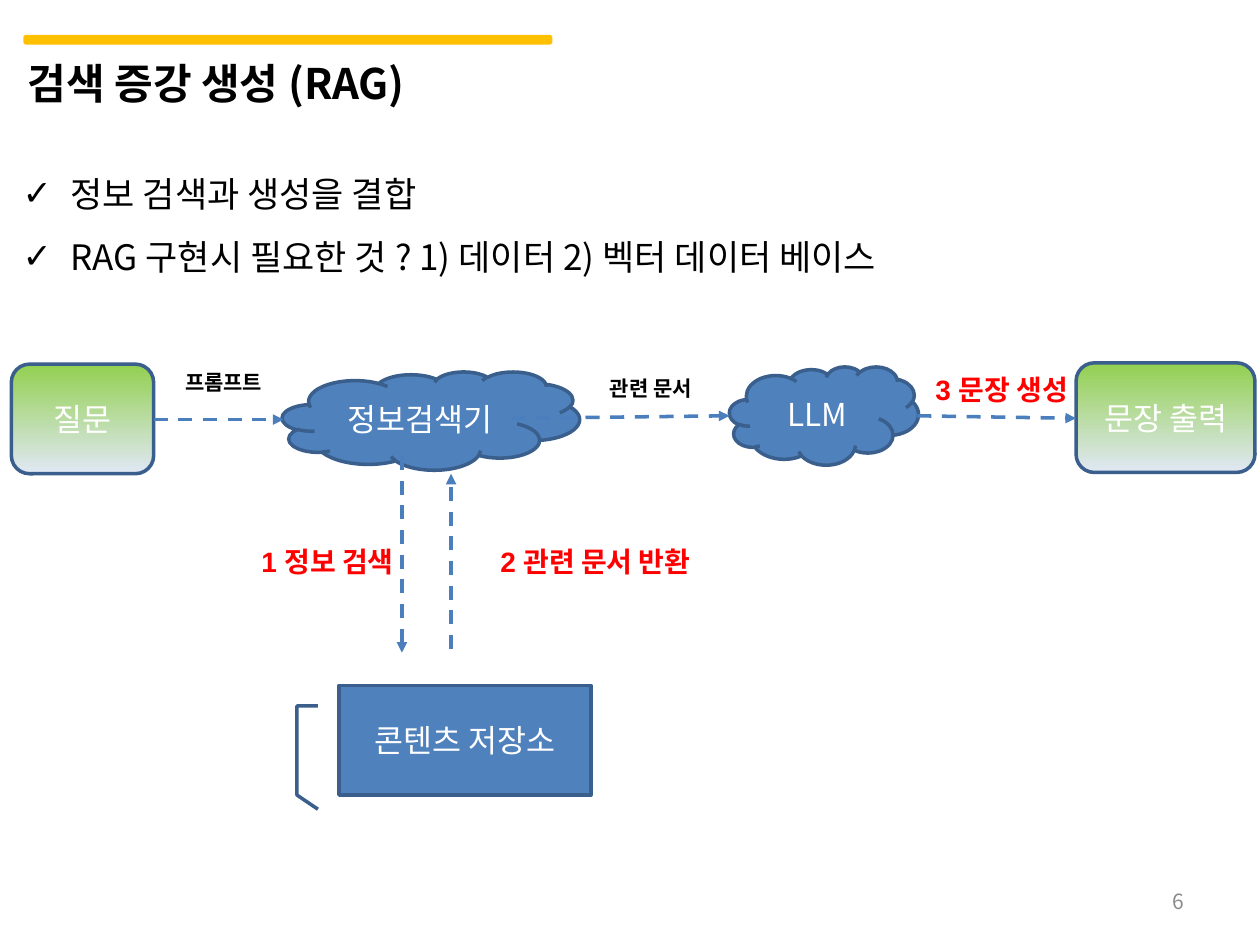
import pptx
import pptx.util
import pptx.dml.color
import pptx.enum.dml
import pptx.enum.shapes
import pptx.enum.text
import pptx.oxml.ns
from lxml import etree

SHAPE = pptx.enum.shapes.MSO_SHAPE
ALIGN = pptx.enum.text.PP_ALIGN
ANCHOR = pptx.enum.text.MSO_ANCHOR
HANGUL_FONT, LABEL_FONT = "Noto Sans CJK KR", "Arial"
BLUE, EDGE, ARROW = "4F81BD", "3A5F8C", "4B7EBC"
GOLD, RED, BLACK, WHITE, GREY = "FFC000", "FF0000", "000000", "FFFFFF", "8C8C8C"
GRADIENT = ("92D050", "E1E8F5")

TITLE = "검색 증강 생성 (RAG)"
BULLETS = [
    "정보 검색과 생성을 결합",
    "RAG 구현시 필요한 것 ? 1) 데이터 2) 벡터 데이터 베이스",
]
# text, preset, (left, top, width, height), fill
NODES = [
    ("질문", SHAPE.ROUNDED_RECTANGLE, (0.09, 2.89, 1.13, 0.87), GRADIENT),
    ("LLM", SHAPE.CLOUD, (5.79, 2.91, 1.5, 0.78), BLUE),
    ("정보검색기", SHAPE.CLOUD, (2.24, 2.95, 2.36, 0.78), BLUE),
    ("콘텐츠 저장소", SHAPE.LINE_CALLOUT_3, (2.69, 5.44, 2, 0.87), BLUE),
    ("문장 출력", SHAPE.ROUNDED_RECTANGLE, (8.54, 2.88, 1.42, 0.87), GRADIENT),
]
# start, end; the arrowhead is at the end
ARROWS = [
    ((1.22, 3.33), (2.25, 3.33)),
    ((4.06, 3.32), (5.79, 3.3)),
    ((7.28, 3.3), (8.54, 3.32)),
    ((3.19, 3.62), (3.19, 5.18)),
    ((3.58, 5.15), (3.58, 3.76)),
]
# text, box, size, colour
LABELS = [
    ("프롬프트", (1.22, 2.88, 1.11, 0.3), 12, BLACK),
    ("관련 문서", (4.61, 2.93, 1.11, 0.3), 12, BLACK),
    ("1 정보 검색", (1.93, 4.27, 1.34, 0.37), 16, RED),
    ("2 관련 문서 반환", (3.73, 4.27, 1.99, 0.37), 16, RED),
    ("3 문장 생성", (7.28, 2.91, 1.34, 0.37), 16, RED),
]


def inches(values):
    return [pptx.util.Inches(value) for value in values]


def paint(color_format, color):
    color_format.rgb = pptx.dml.color.RGBColor.from_string(color)


def add_element(parent, tag, **attributes):
    return etree.SubElement(parent, pptx.oxml.ns.qn(tag), **attributes)


def place(shape, box):
    shape.left, shape.top, shape.width, shape.height = inches(box)


def format_text(shape, size, color, align, anchor, font=HANGUL_FONT, bold=False):
    shape.text_frame.vertical_anchor = anchor
    for paragraph in shape.text_frame.paragraphs:
        paragraph.alignment = align
        for run in paragraph.runs:
            run.font.size = pptx.util.Pt(size)
            run.font.bold = bold
            run.font.name = font
            paint(run.font.color, color)
            add_element(run.font._element, "a:ea", typeface=HANGUL_FONT)


def add_filled_shape(slide, preset, box, fill, edge):
    shape = slide.shapes.add_shape(preset, *inches(box))
    shape.shadow.inherit = False
    if isinstance(fill, tuple):
        shape.fill.gradient()
        shape.fill.gradient_angle = 270
        for stop, color in zip(shape.fill.gradient_stops, fill):
            paint(stop.color, color)
    else:
        shape.fill.solid()
        paint(shape.fill.fore_color, fill)
    paint(shape.line.color, edge)
    shape.line.width = pptx.util.Pt(2)
    return shape


def add_arrow(slide, start, end):
    connector = slide.shapes.add_connector(
        pptx.enum.shapes.MSO_CONNECTOR.STRAIGHT, *inches(start + end))
    paint(connector.line.color, ARROW)
    connector.line.width = pptx.util.Pt(2)
    connector.line.dash_style = pptx.enum.dml.MSO_LINE.DASH
    add_element(connector.line._get_or_add_ln(), "a:tailEnd", type="triangle")
    add_element(connector._element.spPr, "a:effectLst")


def add_text(slide, text, box):
    shape = slide.shapes.add_textbox(*inches(box))
    shape.text_frame.text = text
    return shape


def fill_bullets(body):
    place(body, (0.08, 1.23, 9.62, 0.94))
    body.text_frame.text = "\n".join(BULLETS)
    indent = pptx.util.Inches(0.38)
    for paragraph in body.text_frame.paragraphs:
        properties = paragraph._p.get_or_add_pPr()
        properties.set("marL", str(indent))
        properties.set("indent", str(-indent))
        paragraph.line_spacing = 1.5
        paragraph.space_before = pptx.util.Pt(0)
        add_element(properties, "a:buChar", char="✓")
    format_text(body, 20, BLACK, ALIGN.LEFT, ANCHOR.MIDDLE)


def main():
    presentation = pptx.Presentation()
    presentation.slide_width, presentation.slide_height = inches((10, 7.5))
    slide = presentation.slides.add_slide(presentation.slide_layouts[1])

    add_filled_shape(slide, SHAPE.ROUNDED_RECTANGLE, (0.2, 0.29, 4.17, 0.05), GOLD, GOLD)
    title, body = slide.placeholders
    place(title, (0.12, 0.41, 4.33, 0.5))
    title.text_frame.text = TITLE
    format_text(title, 24, BLACK, ALIGN.LEFT, ANCHOR.TOP, bold=True)
    fill_bullets(body)

    for text, preset, box, fill in NODES:
        node = add_filled_shape(slide, preset, box, fill, EDGE)
        node.text_frame.text = text
        format_text(node, 18, WHITE, ALIGN.CENTER, ANCHOR.MIDDLE)
    for start, end in ARROWS:
        add_arrow(slide, start, end)
    for text, box, size, color in LABELS:
        label = add_text(slide, text, box)
        label.text_frame.word_wrap = False
        format_text(label, size, color, ALIGN.CENTER, ANCHOR.TOP, LABEL_FONT, bold=True)

    number = add_text(slide, "6", (7.17, 6.95, 2.33, 0.4))
    number.text_frame.word_wrap = True
    format_text(number, 12, GREY, ALIGN.RIGHT, ANCHOR.MIDDLE)
    presentation.save("out.pptx")


if __name__ == "__main__":
    main()
